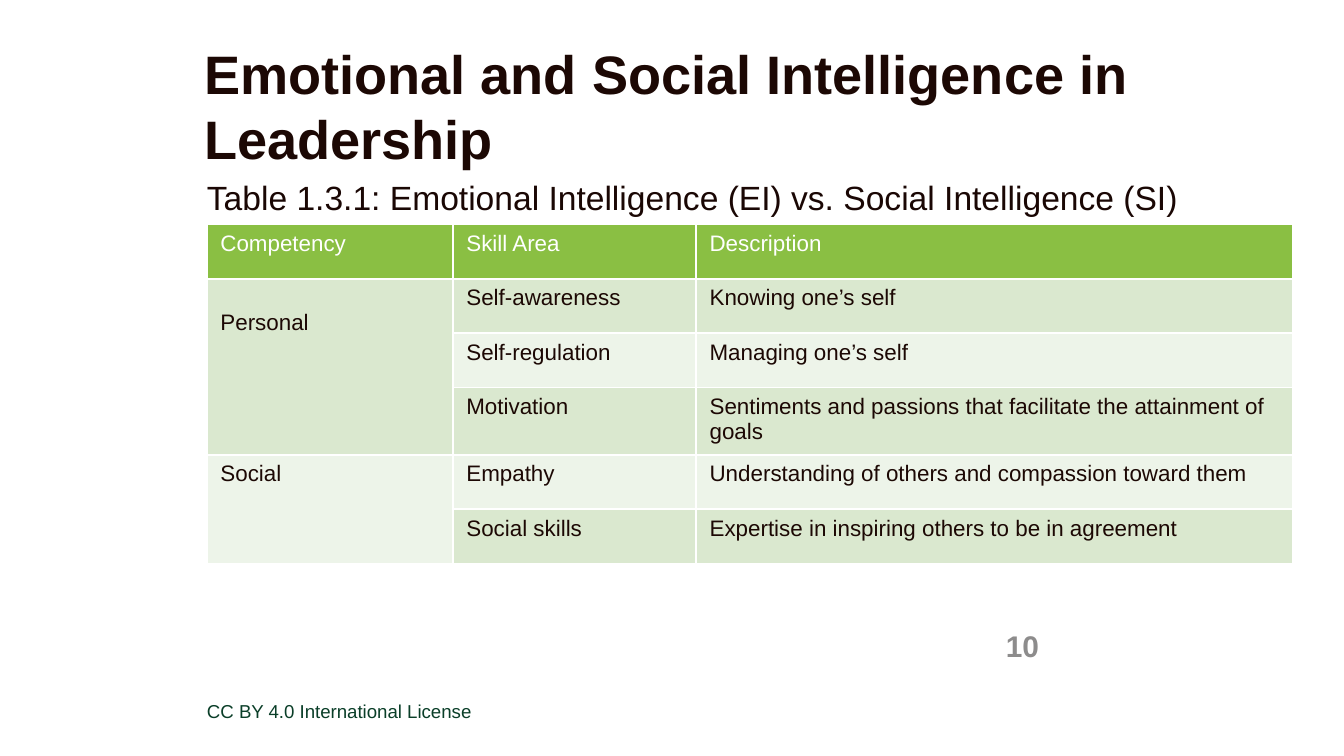
from lxml import etree
from pptx import Presentation
from pptx.dml import color
from pptx.enum import text
from pptx.oxml import ns
from pptx.util import Inches, Pt

FONT = "Arial"
DARK, CAPTION, FOOTER, GREY = "1C0804", "1A0704", "0A3E28", "8D8C8C"
WHITE, GREEN, BAND_DARK, BAND_LIGHT = "FFFFFF", "8ABF43", "DAE8CF", "EDF4E9"

HEADER = ("Competency", "Skill Area", "Description")
GROUPS = {
    "Personal": [
        ("Self-awareness", "Knowing one’s self"),
        ("Self-regulation", "Managing one’s self"),
        ("Motivation", "Sentiments and passions that facilitate the attainment of goals"),
    ],
    "Social": [
        ("Empathy", "Understanding of others and compassion toward them"),
        ("Social skills", "Expertise in inspiring others to be in agreement"),
    ],
}


def rgb(value):
    """Return the colour for a hex string."""
    return color.RGBColor.from_string(value)


def write(frame, words, size, ink, bold=False, align=text.PP_ALIGN.LEFT):
    """Write one formatted paragraph into a text frame."""
    para = frame.paragraphs[0]
    para.alignment = align
    span = para.add_run()
    span.text = words
    span.font.name = FONT
    span.font.size = Pt(size)
    span.font.bold = bold
    span.font.color.rgb = rgb(ink)


def add_text(page, box, words, margins=(0, 0, 0, 0), anchor=text.MSO_ANCHOR.TOP, **style):
    """Add a wrapped text box with margins given as left, top, right, bottom."""
    frame = page.shapes.add_textbox(*map(Inches, box)).text_frame
    frame.word_wrap = True
    frame.vertical_anchor = anchor
    frame.margin_left, frame.margin_top, frame.margin_right, frame.margin_bottom = map(Inches, margins)
    write(frame, words, **style)


def add_borders(cell):
    """Draw thin white borders round a table cell."""
    properties = cell._tc.get_or_add_tcPr()
    for place, side in enumerate("LRTB"):
        line = etree.Element(ns.qn(f"a:ln{side}"), w=str(Pt(1)))
        fill = etree.SubElement(line, ns.qn("a:solidFill"))
        etree.SubElement(fill, ns.qn("a:srgbClr"), val=WHITE)
        properties.insert(place, line)


def fill_cell(cell, words, fill, ink=DARK):
    """Fill, border and label one table cell."""
    cell.fill.solid()
    cell.fill.fore_color.rgb = rgb(fill)
    add_borders(cell)
    if words:
        write(cell.text_frame, words, size=12, ink=ink)


def add_competencies(page, box):
    """Add the table of competencies, merging each group's first column."""
    rows = [
        (group if place == 0 else "", *skill)
        for group, skills in GROUPS.items()
        for place, skill in enumerate(skills)
    ]
    table = page.shapes.add_table(len(rows) + 1, len(HEADER), *map(Inches, box)).table
    for column, width in zip(table.columns, (1.83, 1.81, 4.44)):
        column.width = Inches(width)
    for column, words in enumerate(HEADER):
        fill_cell(table.cell(0, column), words, GREEN, WHITE)
    for number, row in enumerate(rows, 1):
        band = BAND_DARK if number % 2 else BAND_LIGHT
        for column, words in enumerate(row):
            fill_cell(table.cell(number, column), words, band)
    first = 1
    for skills in GROUPS.values():
        last = first + len(skills) - 1
        table.cell(first, 0).merge(table.cell(last, 0))
        first = last + 1
    table.cell(1, 0).margin_top = Inches(0.23)


def add_heading(page, left, top):
    """Add the title and the table caption."""
    add_text(page, (left, top, 7.96, 0.4), "Emotional and Social Intelligence in Leadership",
             margins=(0.5, 0, 0, 0), size=29, ink=DARK, bold=True)
    add_text(page, (left + 0.52, top + 1.01, 7.8, 2.99),
             "Table 1.3.1: Emotional Intelligence (EI) vs. Social Intelligence (SI)",
             margins=(0, 0.01, 0, 0), size=18, ink=CAPTION)


def add_footer(page, left, top):
    """Add the page number and the licence line."""
    add_text(page, (left + 5.57, top, 0.62, 0.3), "10", margins=(0, 0.05, 0, 0),
             anchor=text.MSO_ANCHOR.MIDDLE, size=16, ink=GREY, bold=True,
             align=text.PP_ALIGN.RIGHT)
    add_text(page, (left, top + 0.58, 5.99, 0.15), "CC BY 4.0 International License",
             size=10, ink=FOOTER)


def main():
    """Build and save the deck."""
    deck = Presentation()
    deck.slide_width = Inches(10)
    deck.slide_height = deck.slide_width * 9 // 16
    page = deck.slides.add_slide(deck.slide_layouts[6])
    add_heading(page, 1.02, 0.3)
    add_competencies(page, (1.54, 1.67, 8.09, 2.43))
    add_footer(page, 1.54, 4.63)
    deck.save("out.pptx")


if __name__ == "__main__":
    main()
